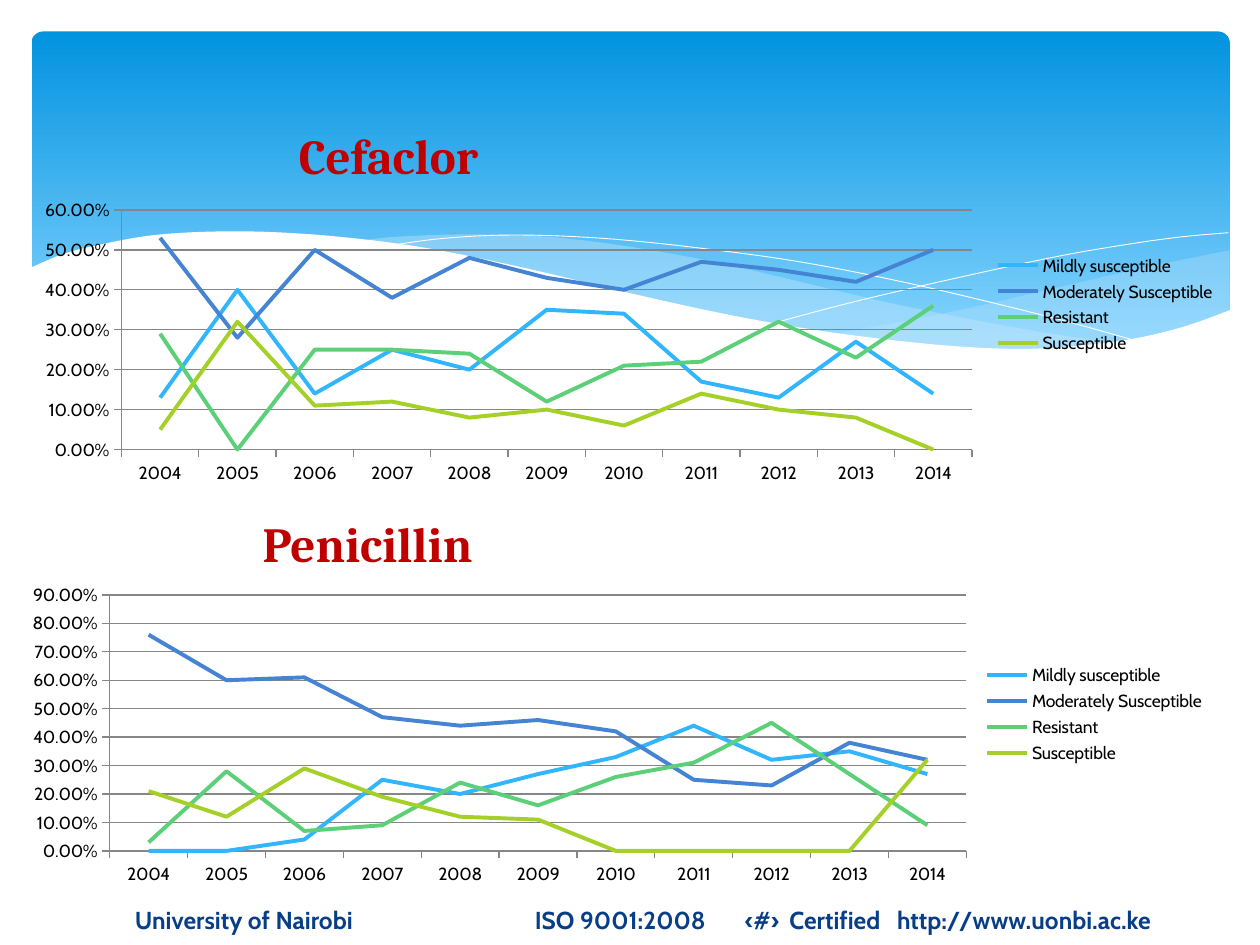
from lxml import etree
from pptx import Presentation
from pptx.chart.data import CategoryChartData
from pptx.dml.color import RGBColor
from pptx.enum import chart as ch, shapes, text
from pptx.oxml import ns, parse_xml
from pptx.util import Pt

COLORS = {
    "sky": "0293E0", "pale": "83D3FE", "mist": "C6E7FC", "white": "FFFFFF",
    "title": "C00000", "footer": "073E87", "black": "000000", "axis": "868686",
}
SERIES = {
    "Mildly susceptible": "31B6FD",
    "Moderately Susceptible": "4584D3",
    "Resistant": "5BD078",
    "Susceptible": "A5D028",
}
YEARS = [str(y) for y in range(2004, 2015)]
CEFACLOR = [
    [.13, .4, .14, .25, .2, .35, .34, .17, .13, .27, .14],
    [.53, .28, .5, .38, .48, .43, .4, .47, .45, .42, .5],
    [.29, 0, .25, .25, .24, .12, .21, .22, .32, .23, .36],
    [.05, .32, .11, .12, .08, .1, .06, .14, .1, .08, 0],
]
PENICILLIN = [
    [0, 0, .04, .25, .2, .27, .33, .44, .32, .35, .27],
    [.76, .6, .61, .47, .44, .46, .42, .25, .23, .38, .32],
    [.03, .28, .07, .09, .24, .16, .26, .31, .45, .27, .09],
    [.21, .12, .29, .19, .12, .11, 0, 0, 0, 0, .32],
]

RIGHT_TOP = [(684.7, 125), (634, 135.4), (581, 147.6), (524, 160.6), (458, 173)]
RIGHT_BOTTOM = [(458, 173), (499, 178), (544, 181.4), (590, 181.4), (634, 175.7),
                (665, 167), (684.7, 160)]
MID_TOP = [(625, 178.6), (585, 173), (540, 165), (490, 155), (435, 142), (392, 132),
           (352, 124.6), (317, 119.5), (284, 116.6), (242, 116), (207, 117.4), (188, 119.5)]
MID_BOTTOM = [(188, 119.5), (228, 125), (273, 134), (335.5, 149), (389.5, 160.6),
              (438.5, 170), (482, 176.4), (521, 180.7), (555, 182), (593, 181.4), (625, 178.6)]
LONG_LINE = [(204.5, 122.4), (230, 118.8), (261, 116.6), (294, 116.6), (334, 118.8),
             (382, 123.8), (440, 131.8), (505, 144.7), (580, 162.7), (635, 177.8)]
SHORT_LINE = [(423, 167), (466, 155.5), (521, 142.6), (584, 129), (626, 121.7),
              (657, 117.4), (684, 115)]
WHITE_TOP = [(685.4, 159), (659, 168.5), (629, 175.7), (594, 180), (564.5, 181.4),
             (530, 180), (492, 176.4), (448, 170.6), (399, 162), (344, 150), (283, 135.4),
             (226, 123.8), (177, 117.4), (134, 114.5), (98, 114.5), (68, 116.6),
             (43, 121), (19.4, 126.7), (-1.4, 135.4)]
WHITE_BASE = [(-1.4, 219), (685.4, 219)]


def rgb(name):
    return RGBColor.from_string(COLORS[name])


def smooth(pts, steps=5):
    ends = [pts[0]] + pts + [pts[-1]]
    out = [pts[0]]
    for a, b, c, d in zip(ends, ends[1:], ends[2:], ends[3:]):
        for i in range(1, steps + 1):
            t = i / steps
            out.append(tuple(
                (2 * q + (r - p) * t + (2 * p - 5 * q + 4 * r - s) * t ** 2
                 + (3 * q - p - 3 * r + s) * t ** 3) / 2
                for p, q, r, s in zip(a, b, c, d)))
    return out


def add_wave(s, x, y, pts, fill=None, alpha=None):
    pts = [(Pt(x + px), Pt(y + py)) for px, py in pts]
    fb = s.shapes.build_freeform(*pts[0])
    fb.add_line_segments(pts[1:], close=fill is not None)
    sp = fb.convert_to_shape()
    sp.shadow.inherit = False
    if fill is None:
        sp.fill.background()
        sp.line.color.rgb = rgb("white")
        sp.line.width = Pt(0.5)
        return
    sp.line.fill.background()
    sp.fill.solid()
    sp.fill.fore_color.rgb = rgb(fill)
    if alpha:
        clr = sp._element.spPr.find(".//" + ns.qn("a:srgbClr"))
        etree.SubElement(clr, ns.qn("a:alpha"), val=str(alpha * 1000))


def add_banner(s, x, y, w, h):
    sp = s.shapes.add_shape(shapes.MSO_SHAPE.ROUNDED_RECTANGLE, Pt(x), Pt(y), Pt(w), Pt(h))
    sp.adjustments[0] = 0.034
    sp.shadow.inherit = False
    sp.line.fill.background()
    sp.fill.gradient()
    sp.fill.gradient_angle = 270
    for stop, name, pos in zip(sp.fill.gradient_stops, ("sky", "pale"), (0, 0.9)):
        stop.color.rgb = rgb(name)
        stop.position = pos
    add_wave(s, x, y, smooth(RIGHT_TOP) + smooth(RIGHT_BOTTOM), "mist", 29)
    add_wave(s, x, y, smooth(MID_TOP) + smooth(MID_BOTTOM), "mist", 40)
    add_wave(s, x, y, smooth(LONG_LINE))
    add_wave(s, x, y, smooth(SHORT_LINE))
    add_wave(s, x, y, smooth(WHITE_TOP) + WHITE_BASE, "white")


def add_text(s, x, y, w, h, words, font, size, color):
    tf = s.shapes.add_textbox(Pt(x), Pt(y), Pt(w), Pt(h)).text_frame
    tf.word_wrap = True
    tf.vertical_anchor = text.MSO_ANCHOR.MIDDLE
    p = tf.paragraphs[0]
    p.text = words
    p.font.name, p.font.size, p.font.bold = font, Pt(size), True
    p.font.color.rgb = rgb(color)
    return tf


def add_title(s, x, y, w, h, words):
    tf = add_text(s, x, y, w, h, words, "Cambria", 28, "title")
    tf.paragraphs[0].alignment = text.PP_ALIGN.CENTER


def add_trend(s, x, y, w, h, rows, top, plot):
    data = CategoryChartData(number_format="0.00%")
    data.categories = YEARS
    for name, row in zip(SERIES, rows):
        data.add_series(name, row)
    chart = s.shapes.add_chart(ch.XL_CHART_TYPE.LINE, Pt(x), Pt(y), Pt(w), Pt(h), data).chart
    chart.has_title = False
    chart.font.name, chart.font.size = "Cabin", Pt(10)
    chart.font.color.rgb = rgb("black")
    chart.has_legend = True
    chart.legend.position = ch.XL_LEGEND_POSITION.RIGHT
    chart.legend.include_in_layout = False
    chart.plots[0].vary_by_categories = False
    for ser, color in zip(chart.plots[0].series, SERIES.values()):
        ser.smooth = False
        ser.marker.style = ch.XL_MARKER_STYLE.NONE
        ser.format.line.width = Pt(2.25)
        ser.format.line.color.rgb = RGBColor.from_string(color)
    va, ca = chart.value_axis, chart.category_axis
    va.minimum_scale, va.maximum_scale, va.major_unit = 0, top, 0.1
    va.tick_labels.number_format = "0.00%"
    va.tick_labels.number_format_is_linked = False
    va.has_major_gridlines = True
    for part in (va, ca, va.major_gridlines):
        part.format.line.color.rgb = rgb("axis")
        part.format.line.width = Pt(0.75)
    for axis in (va, ca):
        axis.major_tick_mark = ch.XL_TICK_MARK.OUTSIDE
    area = chart._chartSpace.chart.plotArea
    for old in area.findall(ns.qn("c:layout")):
        area.remove(old)
    sizes = "".join(f'<c:{k} val="{v / full}"/>' for k, v, full in zip("xywh", plot, (w, h, w, h)))
    area.insert(0, parse_xml(
        f'<c:layout {ns.nsdecls("c")}><c:manualLayout><c:layoutTarget val="inner"/>'
        f'<c:xMode val="edge"/><c:yMode val="edge"/>{sizes}</c:manualLayout></c:layout>'))


def add_footer(s, x, y, w, h):
    words = "University of Nairobi\tISO 9001:2008\t‹#›\tCertified\thttp://www.uonbi.ac.ke"
    tf = add_text(s, x, y, w, h, words, "Cabin", 14, "footer")
    tf.margin_left, tf.margin_right = Pt(55.5), 0
    pPr = tf.paragraphs[0]._p.get_or_add_pPr()
    tabs = etree.Element(ns.qn("a:tabLst"))
    for pos in (228.5, 348.5, 374, 435.5):
        etree.SubElement(tabs, ns.qn("a:tab"), pos=str(Pt(pos)), algn="l")
    pPr.insert(0, tabs)


def main():
    prs = Presentation()
    prs.slide_width, prs.slide_height = Pt(720), Pt(540)
    s = prs.slides.add_slide(prs.slide_layouts[6])
    add_banner(s, 18, 18, 684.7, 194.4)
    add_title(s, 144, 66, 156, 45, "Cefaclor")
    add_trend(s, 24, 66, 678, 216, CEFACLOR, 0.6, (45.4, 54, 486, 137))
    add_trend(s, 18, 306, 678, 204, PENICILLIN, 0.9, (44.7, 34, 489.5, 146.3))
    add_title(s, 132, 288, 156, 45, "Penicillin")
    add_footer(s, 21.6, 511, 692.6, 29)
    prs.save("out.pptx")


if __name__ == "__main__":
    main()
